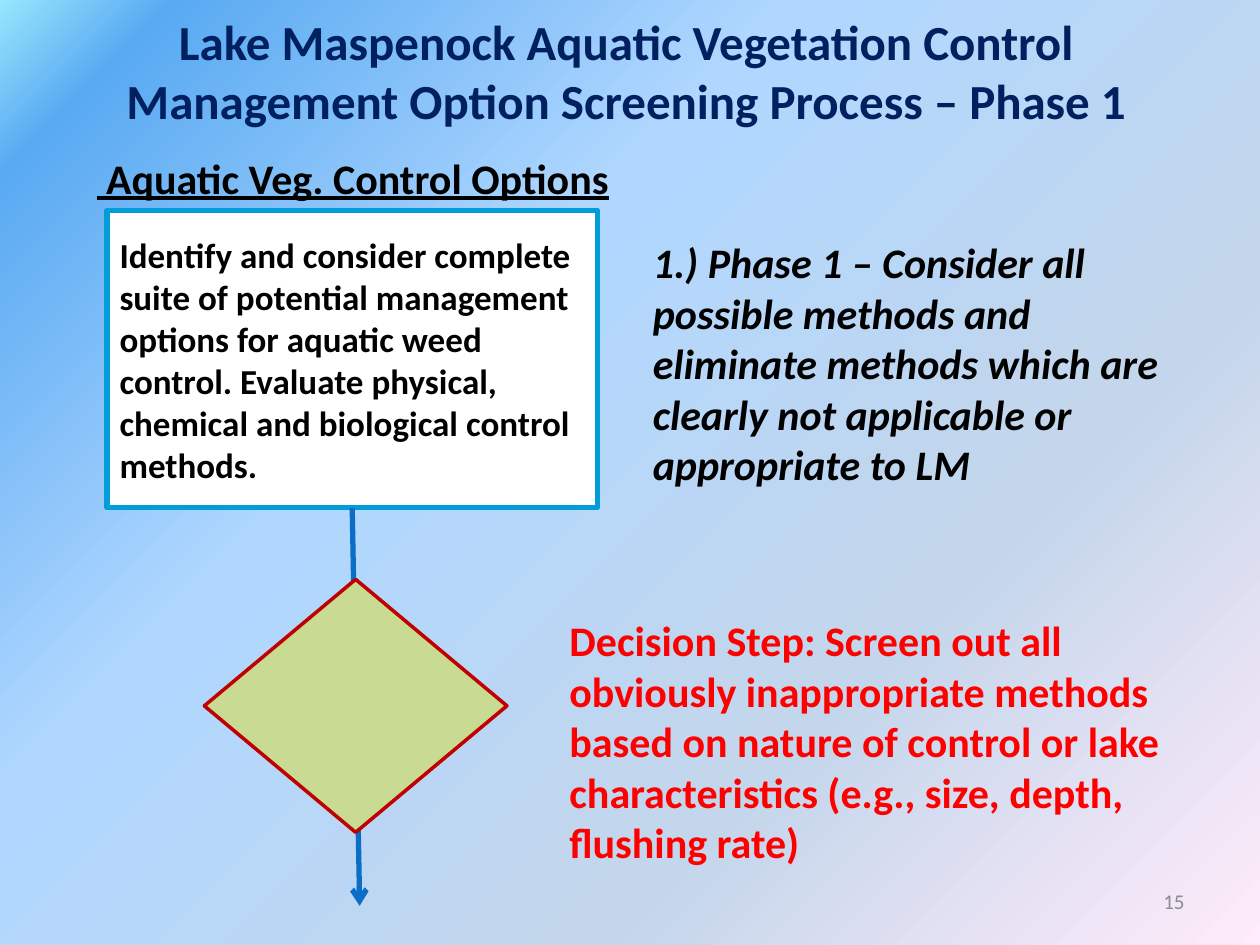
from collections import namedtuple

from lxml import etree
from pptx import Presentation
from pptx.dml.color import RGBColor
from pptx.enum.shapes import MSO_CONNECTOR, MSO_SHAPE
from pptx.enum.text import MSO_ANCHOR, PP_ALIGN
from pptx.oxml import parse_xml
from pptx.oxml.ns import nsdecls, qn
from pptx.util import Cm, Pt

Box = namedtuple("Box", "left top width height")
GRADIENT = [(0, "97E6FC"), (8, "59AAF2"), (36, "B0D7FF"), (70, "C4D6EB"), (100, "FFEBFA")]


def color(value):
    return RGBColor.from_string(value)


def lengths(box):
    return [Cm(value) for value in box]


def set_background(page):
    stops = "".join(
        f'<a:gs pos="{position * 1000}"><a:srgbClr val="{value}"/></a:gs>'
        for position, value in GRADIENT
    )
    background = parse_xml(
        f'<p:bg {nsdecls("p", "a")}><p:bgPr><a:gradFill rotWithShape="1">'
        f'<a:gsLst>{stops}</a:gsLst><a:lin ang="2700000" scaled="0"/>'
        "</a:gradFill><a:effectLst/></p:bgPr></p:bg>"
    )
    page.element.find(qn("p:cSld")).insert(0, background)


def write(shape, text, size, ink="000000", align=PP_ALIGN.LEFT, anchor=MSO_ANCHOR.TOP,
          bold=True, italic=False, underline=False):
    frame = shape.text_frame
    frame.word_wrap = True
    frame.vertical_anchor = anchor
    para = frame.paragraphs[0]
    para.alignment = align
    span = para.add_run()
    span.text = text
    font = span.font
    font.name, font.size, font.color.rgb = "Calibri", Pt(size), color(ink)
    font.bold, font.italic, font.underline = bold, italic, underline


def add_text(page, box, text, size, **style):
    write(page.shapes.add_textbox(*lengths(box)), text, size, **style)


def add_block(page, preset, box, fill, outline, weight):
    block = page.shapes.add_shape(preset, *lengths(box))
    block.shadow.inherit = False
    block.fill.solid()
    block.fill.fore_color.rgb = color(fill)
    block.line.color.rgb = color(outline)
    block.line.width = Pt(weight)
    return block


def add_arrow(page, start, end):
    arrow = page.shapes.add_connector(MSO_CONNECTOR.STRAIGHT, *lengths(start + end))
    arrow.line.color.rgb = color("0A6DC6")
    arrow.line.width = Pt(3)
    etree.SubElement(arrow.line._get_or_add_ln(), qn("a:tailEnd"), type="arrow")
    etree.SubElement(arrow.element.spPr, qn("a:effectLst"))


def place_title(page, box):
    title = page.shapes.title
    title.left, title.top, title.width, title.height = lengths(box)
    write(title, "Lake Maspenock Aquatic Vegetation Control "
          "Management Option Screening Process – Phase 1",
          28, ink="002060", align=PP_ALIGN.CENTER, anchor=MSO_ANCHOR.MIDDLE)


def draw_flow(page, box):
    """Options box at the top, decision diamond below, and the arrow through both."""
    left, top, width, height = box
    options = add_block(page, MSO_SHAPE.RECTANGLE, Box(left, top + 1.3, width, 6),
                        "FFFFFF", "009DD9", 3)
    write(options, "Identify and consider complete suite of potential management options "
          "for aquatic weed control. Evaluate physical, chemical and biological control "
          "methods.", 20, anchor=MSO_ANCHOR.MIDDLE)
    add_text(page, Box(left - 0.46, top, 11.23, 1.27), " Aquatic Veg. Control Options",
             24, underline=True)
    middle = left + width / 2
    add_arrow(page, (middle, top + 7.3), (middle + 0.15, top + height))
    add_block(page, MSO_SHAPE.FLOWCHART_DECISION, Box(middle - 2.98, top + 8.74, 6.1, 5.1),
              "C9DA92", "C00000", 2)


def add_comments(page, box):
    """Phase note at the top right, decision note at the bottom left."""
    left, top, width, height = box
    add_text(page, Box(left + 1.68, top, width - 1.68, 6.25),
             "1.) Phase 1 – Consider all possible methods and eliminate methods which are "
             "clearly not applicable or appropriate to LM", 24, italic=True)
    add_text(page, Box(left, top + height - 5.38, 12.88, 5.38),
             "Decision Step: Screen out all obviously inappropriate methods based on nature "
             "of control or lake characteristics (e.g., size, depth, flushing rate)",
             24, ink="FF0000")


def main():
    deck = Presentation()
    deck.slide_width, deck.slide_height = Cm(25.4), Cm(19.05)
    page = deck.slides.add_slide(deck.slide_layouts[5])
    set_background(page)
    place_title(page, Box(1.27, 0.3, 22.7, 2.24))
    draw_flow(page, Box(2.16, 2.94, 9.88, 15.32))
    add_comments(page, Box(11.23, 4.65, 13.26, 13))
    add_text(page, Box(18.2, 17.65, 5.93, 1.02), "15", 12, ink="8C8C8C",
             align=PP_ALIGN.RIGHT, anchor=MSO_ANCHOR.MIDDLE, bold=False)
    deck.save("out.pptx")


if __name__ == "__main__":
    main()
